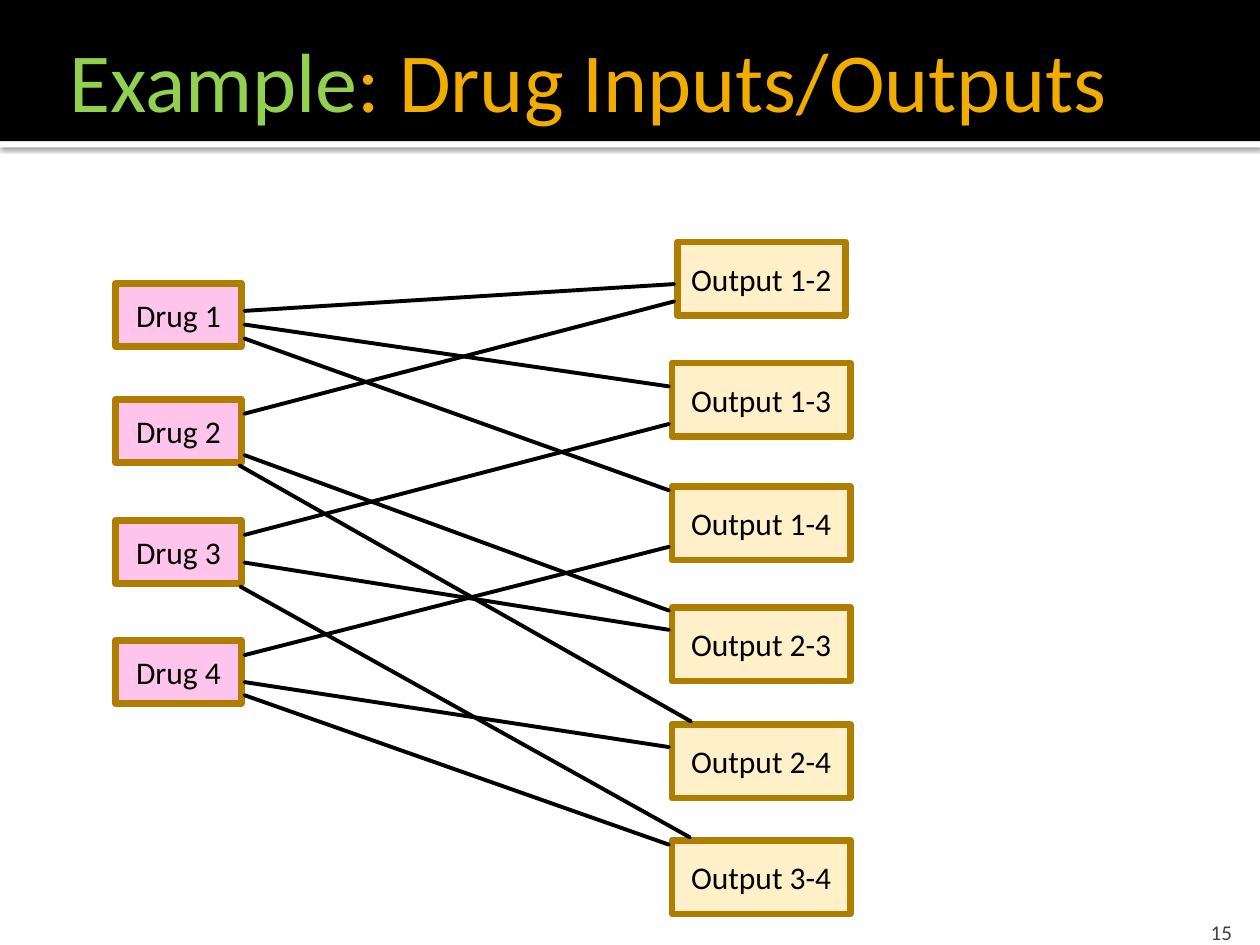
from itertools import combinations

from lxml.etree import SubElement
from pptx import Presentation
from pptx.dml.color import RGBColor
from pptx.enum.shapes import MSO_CONNECTOR, MSO_SHAPE
from pptx.enum.text import MSO_ANCHOR, PP_ALIGN
from pptx.oxml.ns import qn
from pptx.util import Pt

# Content
TITLE = [("Example", "green"), (": Drug Inputs/Outputs", "gold")]
PAGE = "15"
DRUG_TOPS = {1: 162, 2: 228.25, 3: 297.5, 4: 366}
OUT_TOPS = [138.25, 207.5, 278, 347.25, 414, 480.25]
PAIRS = list(combinations(DRUG_TOPS, 2))

# Style
COLORS = {"green": "92D050", "gold": "F0AD00", "black": "000000",
          "white": "FFFFFF", "gray": "414141", "pink": "FFC4EC",
          "cream": "FFF0C9", "brown": "AF7E00"}
FONT = "Calibri"
BORDER = 3.78
GAP = 1.75  # space between a box outline and its links

prs = Presentation()
prs.slide_width, prs.slide_height = Pt(720), Pt(540)
slide = prs.slides.add_slide(prs.slide_layouts[5])
shapes = slide.shapes


def color(name):
    return RGBColor.from_string(COLORS[name])


def add_run(para, text, size, name):
    run = para.add_run()
    run.text = text
    run.font.name, run.font.size = FONT, Pt(size)
    run.font.color.rgb = color(name)


def set_inset(frame, size):
    frame.margin_left = frame.margin_right = Pt(size)
    frame.margin_top = frame.margin_bottom = Pt(size)


def add_rect(left, top, width, height, fill):
    rect = shapes.add_shape(MSO_SHAPE.RECTANGLE, Pt(left), Pt(top), Pt(width), Pt(height))
    rect.shadow.inherit = False
    rect.fill.solid()
    rect.fill.fore_color.rgb = color(fill)
    rect.line.fill.background()
    return rect


def add_box(text, left, top, width, height, fill):
    box = add_rect(left, top, width, height, fill)
    box.line.color.rgb = color("brown")
    box.line.width = Pt(BORDER)
    frame = box.text_frame
    frame.word_wrap = True
    frame.vertical_anchor = MSO_ANCHOR.MIDDLE
    set_inset(frame, 3.6)
    para = frame.paragraphs[0]
    para.alignment = PP_ALIGN.CENTER
    add_run(para, text, 18, "black")
    return left + width / 2, top + height / 2, width / 2 + GAP, height / 2 + GAP


def edge_point(box, other):
    """Where the line between two box centers leaves the first box."""
    x, y, half_w, half_h = box
    dx, dy = other[0] - x, other[1] - y
    part = min(half_w / abs(dx), half_h / abs(dy)) if dy else half_w / abs(dx)
    return Pt(x + dx * part), Pt(y + dy * part)


def add_link(start, end):
    link = shapes.add_connector(MSO_CONNECTOR.STRAIGHT,
                                *edge_point(start, end), *edge_point(end, start))
    link.line.color.rgb = color("black")
    link.line.width = Pt(2.25)
    props = link._element.spPr
    props.find(qn("a:ln")).set("cap", "rnd")
    SubElement(props, qn("a:effectLst"))


# Header band with a shadowed white strip below
strip = add_rect(0, 80.64, 720, 3.6, "white")
effects = strip._element.spPr.find(qn("a:effectLst"))
shadow = SubElement(effects, qn("a:outerShdw"), blurRad=str(Pt(3)),
                    dist=str(Pt(0.8)), dir="5400000", rotWithShape="0")
tint = SubElement(shadow, qn("a:srgbClr"), val=COLORS["black"])
SubElement(tint, qn("a:alpha"), val="60000")
add_rect(0, 0, 720, 80.64, "black")

# Title, brought in front of the band
title = shapes.title
title.left, title.top, title.width, title.height = Pt(36), Pt(12.25), Pt(684), Pt(66)
frame = title.text_frame
frame.word_wrap = True
frame.vertical_anchor = MSO_ANCHOR.MIDDLE
set_inset(frame, 3.6)
frame.paragraphs[0].alignment = PP_ALIGN.LEFT
for text, name in TITLE:
    add_run(frame.paragraphs[0], text, 48, name)
shapes._spTree.append(title._element)

# Page number
page = shapes.add_textbox(Pt(690.5), Pt(526.25), Pt(13.5), Pt(13.5)).text_frame
page.word_wrap = False
page.vertical_anchor = MSO_ANCHOR.BOTTOM
set_inset(page, 0)
page.paragraphs[0].alignment = PP_ALIGN.RIGHT
add_run(page.paragraphs[0], PAGE, 12, "gray")

# Drugs and outputs
drugs = {num: add_box(f"Drug {num}", 66, top, 72, 36, "pink")
         for num, top in DRUG_TOPS.items()}
outs = {}
for pair, top in zip(PAIRS, OUT_TOPS):
    width = 96 if pair == PAIRS[0] else 102
    outs[pair] = add_box("Output {}-{}".format(*pair), 435 - width / 2, top, width, 42, "cream")

# Each output is linked to both of its drugs
for pair, out in outs.items():
    for num in pair:
        add_link(drugs[num], out)

prs.save("out.pptx")
